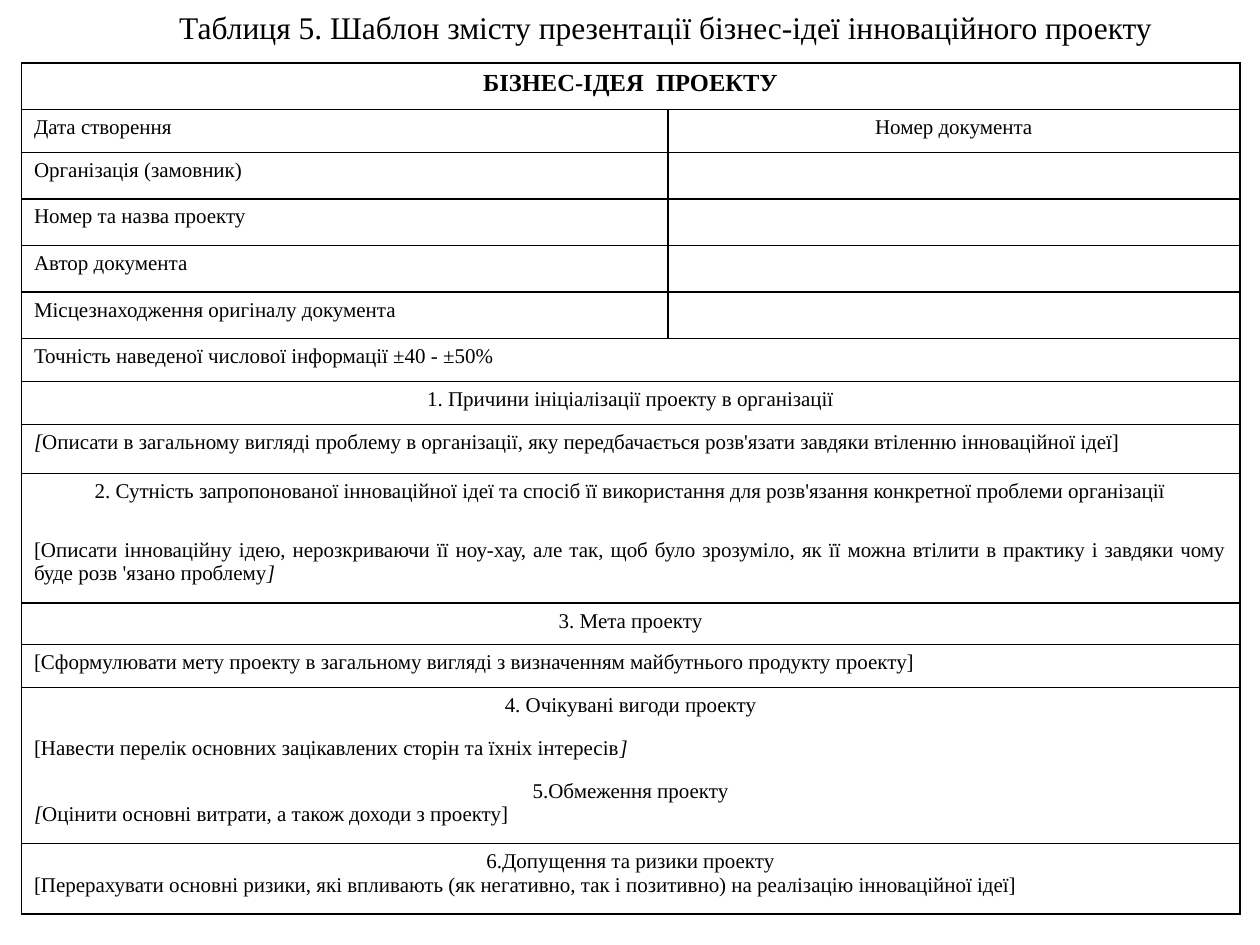
from lxml.etree import SubElement
from pptx import Presentation
from pptx.dml.color import RGBColor
from pptx.enum.text import MSO_ANCHOR, PP_ALIGN
from pptx.oxml.ns import qn
from pptx.util import Inches, Pt

COLORS = {"ink": "000000", "paper": "FFFFFF"}
FONT = "Times New Roman"
ALIGN = {"l": PP_ALIGN.LEFT, "c": PP_ALIGN.CENTER, "j": PP_ALIGN.JUSTIFY}
TITLE = "Таблиця 5. Шаблон змісту презентації бізнес-ідеї інноваційного проекту"
COLS = [5.13, 4.54]

# Row: height, hidden borders (T, B), cells. A lone cell spans both columns.
# Cell: paragraphs of (alignment, text); asterisks enclose italics.
ROWS = [
    (0.37, "", [[("c", "БІЗНЕС-ІДЕЯ  ПРОЕКТУ")]]),
    (0.34, "", [[("j", "Дата створення")], [("c", "Номер документа")]]),
    (0.37, "", [[("j", "Організація (замовник)")], [("l", "")]]),
    (0.37, "", [[("j", "Номер та назва проекту")], [("l", "")]]),
    (0.37, "", [[("j", "Автор документа")], [("l", "")]]),
    (0.37, "", [[("l", "Місцезнаходження оригіналу документа")], [("l", "")]]),
    (0.34, "", [[("j", "Точність наведеної числової інформації ±40 - ±50%")]]),
    (0.34, "", [[("c", "1. Причини ініціалізації проекту в організації")]]),
    (0.39, "", [[("j", "*[*Описати в загальному вигляді проблему в організації, яку "
                       "передбачається розв'язати завдяки втіленню інноваційної ідеї]")]]),
    (0.47, "B", [[("c", "2. Сутність запропонованої інноваційної ідеї та спосіб її "
                        "використання для розв'язання конкретної проблеми організації")]]),
    (0.56, "T", [[("j", "[Описати інноваційну ідею, нерозкриваючи її ноу-хау, але так, "
                        "щоб було зрозуміло, як її можна втілити в практику і завдяки "
                        "чому буде розв 'язано проблему*]*")]]),
    (0.33, "", [[("c", "3. Мета проекту")]]),
    (0.34, "", [[("j", "[Сформулювати мету проекту в загальному вигляді з визначенням "
                       "майбутнього продукту проекту]")]]),
    (0.34, "B", [[("c", "4. Очікувані вигоди проекту")]]),
    (0.34, "TB", [[("j", "[Навести перелік основних зацікавлених сторін та їхніх "
                         "інтересів*]*")]]),
    (0.56, "T", [[("c", "5.Обмеження проекту"),
                  ("j", "*[*Оцінити основні витрати, а також доходи з проекту]")]]),
    (0.56, "", [[("c", "6.Допущення та ризики проекту"),
                 ("l", "[Перерахувати основні ризики, які впливають (як негативно, так і "
                       "позитивно) на реалізацію інноваційної ідеї]")]]),
]


def set_font(para, size, bold=False):
    font = para.font
    font.name, font.size, font.bold = FONT, Pt(size), bold
    font.color.rgb = RGBColor.from_string(COLORS["ink"])


def frame(cell, hidden):
    """Draw the cell's borders, except the hidden sides, and its fill."""
    props = cell._tc.get_or_add_tcPr()
    for side in "LRTB":
        line = SubElement(props, qn(f"a:ln{side}"), w=str(Pt(1)))
        if side in hidden:
            SubElement(line, qn("a:noFill"))
        else:
            fill = SubElement(line, qn("a:solidFill"))
            SubElement(fill, qn("a:srgbClr"), val=COLORS["ink"])
    cell.fill.solid()
    cell.fill.fore_color.rgb = RGBColor.from_string(COLORS["paper"])


def write(cell, paras, size, bold):
    text = cell.text_frame
    for i, (align, words) in enumerate(paras):
        para = text.add_paragraph() if i else text.paragraphs[0]
        para.alignment = ALIGN[align]
        set_font(para, size, bold)
        for n, part in enumerate(words.split("*")):
            if part:
                run = para.add_run()
                run.text = part
                if n % 2:
                    run.font.italic = True


def add_title(slide):
    title = slide.shapes.title
    title.left, title.top = Inches(0.25), Inches(0.01)
    title.width, title.height = Inches(9.58), Inches(0.4)
    text = title.text_frame
    text.text = TITLE
    text.word_wrap = True
    text.vertical_anchor = MSO_ANCHOR.MIDDLE
    para = text.paragraphs[0]
    para.alignment = PP_ALIGN.CENTER
    para._p.get_or_add_pPr().set("indent", str(Inches(0.49)))
    set_font(para, 18)


def add_form(slide):
    height = sum(row[0] for row in ROWS)
    table = slide.shapes.add_table(len(ROWS), len(COLS), Inches(0.17), Inches(0.5),
                                   Inches(sum(COLS)), Inches(height)).table
    table.first_row = table.horz_banding = False
    for col, width in zip(table.columns, COLS):
        col.width = Inches(width)
    for r, (high, hidden, cells) in enumerate(ROWS):
        table.rows[r].height = Inches(high)
        for c in range(len(COLS)):
            frame(table.cell(r, c), hidden)
        if len(cells) == 1:
            table.cell(r, 0).merge(table.cell(r, 1))
        for c, paras in enumerate(cells):
            write(table.cell(r, c), paras, 12 if r else 14, r == 0)


def main():
    deck = Presentation()
    deck.slide_width, deck.slide_height = Inches(10), Inches(7.5)
    slide = deck.slides.add_slide(deck.slide_layouts[5])
    add_title(slide)
    add_form(slide)
    deck.save("out.pptx")


if __name__ == "__main__":
    main()
